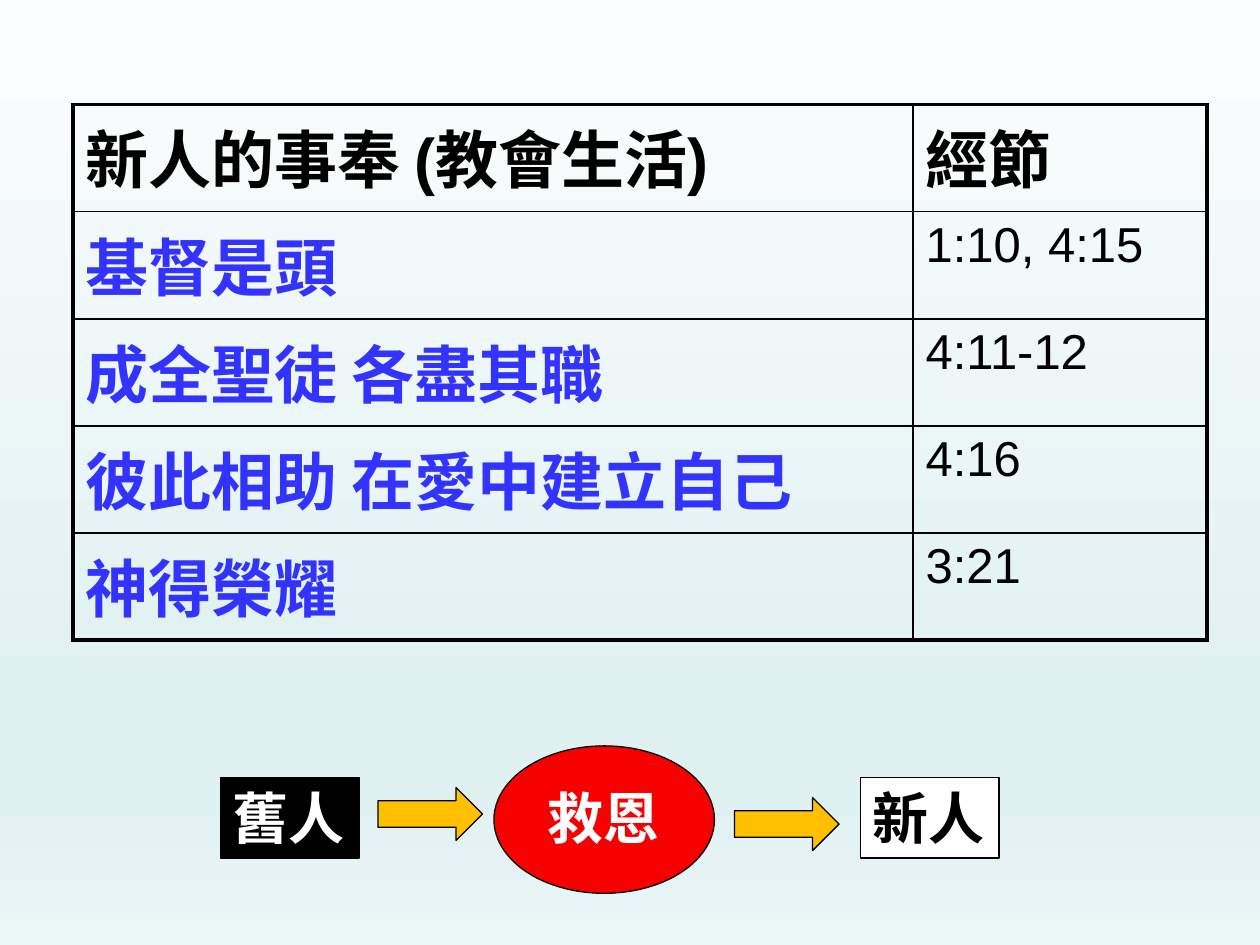
from lxml import etree
from pptx import Presentation
from pptx.dml.color import RGBColor
from pptx.enum.shapes import MSO_SHAPE
from pptx.enum.text import MSO_ANCHOR, MSO_AUTO_SIZE, PP_ALIGN
from pptx.oxml.ns import qn
from pptx.util import Inches, Pt

OVAL, RECT, ARROW = MSO_SHAPE.OVAL, MSO_SHAPE.RECTANGLE, MSO_SHAPE.RIGHT_ARROW
TOP, LEFT, GROW = MSO_ANCHOR.TOP, PP_ALIGN.LEFT, MSO_AUTO_SIZE.SHAPE_TO_FIT_TEXT

BLACK = RGBColor(0, 0, 0)
WHITE = RGBColor(255, 255, 255)
BLUE = RGBColor(0x33, 0x33, 0xFF)
RED = RGBColor(0xF7, 0, 0)
GOLD = RGBColor(0xFF, 0xC0, 0)
PALE = RGBColor(0xFC, 0xFD, 0xFE)
MINT = RGBColor(0xE0, 0xF1, 0xF2)
FOAM = RGBColor(0xEB, 0xF6, 0xF7)

STOPS = [(0, PALE), (74, MINT), (83, MINT), (100, FOAM)]
HEAD = {"name": "Arial", "size": Pt(36), "bold": True}
VERSE = {"name": "Arial", "size": Pt(28), "bold": False}
LABEL = {"name": "Arial", "size": Pt(32), "bold": True}
FRAME = {"word_wrap": False, "auto_size": GROW, "vertical_anchor": TOP}

ROWS = [
    ("新人的事奉 (教會生活)", "經節"),
    ("基督是頭", "1:10, 4:15"),
    ("成全聖徒 各盡其職", "4:11-12"),
    ("彼此相助 在愛中建立自己", "4:16"),
    ("神得榮耀", "3:21"),
]


def apply(item, style):
    for key, value in style.items():
        setattr(item, key, value)


def write(frame, text, style, color):
    para = frame.paragraphs[0]
    para.alignment = LEFT
    run = para.add_run()
    run.text = text
    apply(run.font, style)
    run.font.color.rgb = color


def add_fill(node, color):
    fill = etree.SubElement(node, qn("a:solidFill"))
    etree.SubElement(fill, qn("a:srgbClr"), val=str(color))


def paint_back(slide):
    fill = slide.background.fill
    fill.gradient()
    fill.gradient_angle = 270
    stops = next(slide.element.iter(qn("a:gsLst")))
    for stop in list(stops):
        stops.remove(stop)
    for place, color in STOPS:
        stop = etree.SubElement(stops, qn("a:gs"), pos=str(place * 1000))
        etree.SubElement(stop, qn("a:srgbClr"), val=str(color))


def set_edges(cell, widths):
    props = cell._tc.get_or_add_tcPr()
    for index, (side, width) in enumerate(widths.items()):
        edge = etree.Element(qn(f"a:ln{side}"), w=str(Pt(width)))
        add_fill(edge, BLACK)
        props.insert(index, edge)


def add_grid(slide, left, top, width, height):
    count = len(ROWS)
    table = slide.shapes.add_table(
        count, 2, Inches(left), Inches(top), Inches(width), Inches(height)
    ).table
    apply(table, {"first_row": False, "horz_banding": False})
    for col, share in zip(table.columns, (20, 7)):
        col.width = Inches(width * share / 27)
    for row, texts in enumerate(ROWS):
        for col, text in enumerate(texts):
            cell = table.cell(row, col)
            cell.fill.background()
            style = VERSE if row and col else HEAD
            color = BLUE if row and not col else BLACK
            write(cell.text_frame, text, style, color)
            outer = {"L": col == 0, "R": col == 1,
                     "T": row == 0, "B": row == count - 1}
            set_edges(cell, {side: 2.25 if thick else 1
                             for side, thick in outer.items()})


def add_part(group, kind, box, fill):
    shape = group.shapes.add_shape(kind, *map(Inches, box))
    shape.shadow.inherit = False
    shape.fill.solid()
    shape.fill.fore_color.rgb = fill
    shape.line.color.rgb = BLACK
    shape.line.width = Pt(0.75)
    return shape


def add_label(shape, text, color):
    frame = shape.text_frame
    apply(frame, FRAME)
    write(frame, text, LABEL, color)


def add_flow(slide, left, top):
    group = slide.shapes.add_group_shape()
    add_part(group, OVAL, (left + 2.17, top, 1.75, 1.17), RED)
    level = top + 0.25
    old = add_part(group, RECT, (left, level, 1.1, 0.64), BLACK)
    grace = group.shapes.add_textbox(
        *map(Inches, (left + 2.5, level, 1.09, 0.63)))
    new = add_part(group, RECT, (left + 5.08, level, 1.1, 0.64), WHITE)
    add_label(old, "舊人", WHITE)
    add_label(grace, "救恩", WHITE)
    add_label(new, "新人", BLACK)
    for across, down in ((1.25, 0.33), (4.08, 0.41)):
        add_part(group, ARROW, (left + across, top + down, 0.83, 0.42), GOLD)


def main():
    deck = Presentation()
    deck.slide_width, deck.slide_height = Inches(10), Inches(7.5)
    slide = deck.slides.add_slide(deck.slide_layouts[6])
    paint_back(slide)
    add_grid(slide, 0.58, 0.83, 9, 4.25)
    add_flow(slide, 1.75, 5.92)
    deck.save("out.pptx")


if __name__ == "__main__":
    main()
